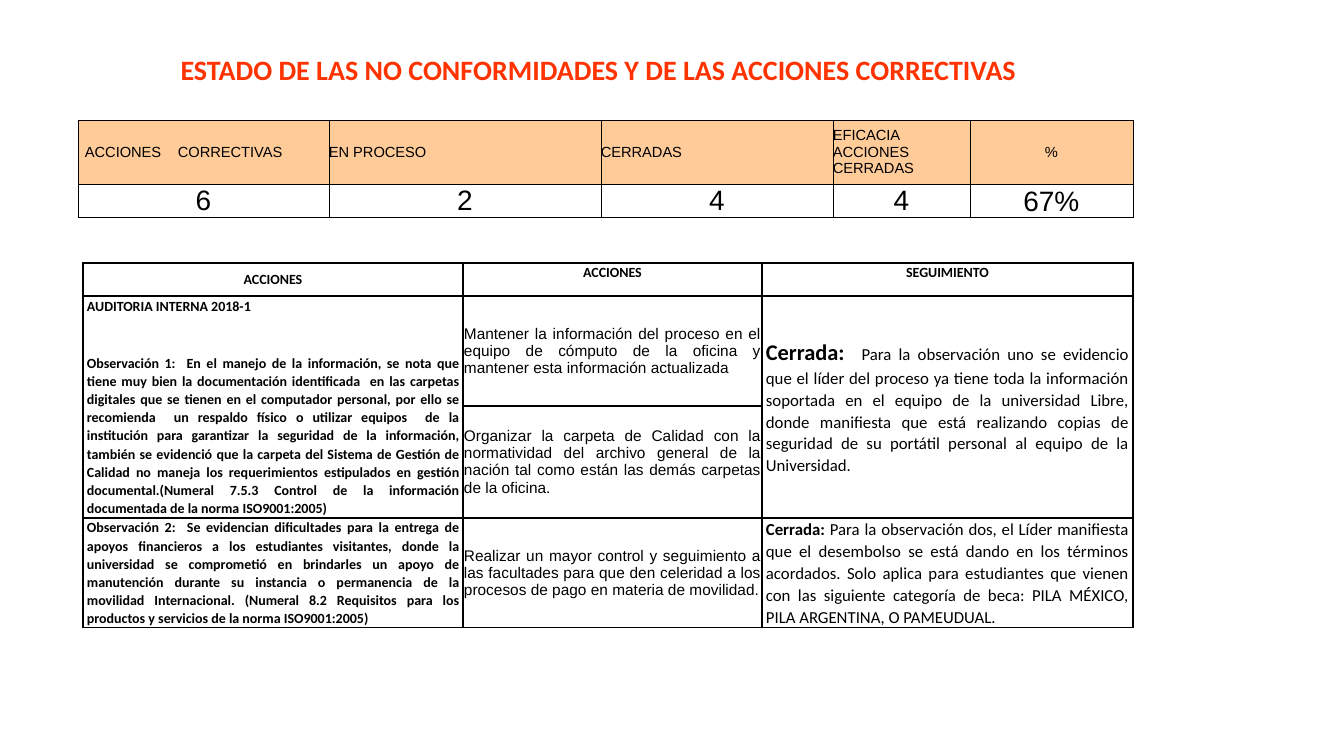
from lxml import etree
from pptx import Presentation
from pptx import util as u
from pptx.dml.color import RGBColor
from pptx.enum import text
from pptx.oxml.ns import qn

CENTER, JUSTIFY = text.PP_ALIGN.CENTER, text.PP_ALIGN.JUSTIFY
TOP, MIDDLE, BOTTOM = text.MSO_ANCHOR.TOP, text.MSO_ANCHOR.MIDDLE, text.MSO_ANCHOR.BOTTOM


def px(n):
    return u.Emu(round(n * 914400 / 100.8))


def color(value):
    return RGBColor.from_string(value)


class Page:
    black, white, peach, orange = "000000", "FFFFFF", "FFCC99", "FF3300"

    def __init__(self, prs):
        self.s = prs.slides.add_slide(prs.slide_layouts[6])

    def style(self, r, size, font, bold=False, fill=black):
        r.font.size, r.font.name, r.font.bold = u.Pt(size), font, bold
        r.font.color.rgb = color(fill)

    def paragraph(self, p, content, size, font, align, bold=False, fill=black,
                  spacing=None, after=0, lead="", lead_size=None):
        """Fill one paragraph, with an optional bold lead-in."""
        p.text = lead or content
        p.alignment, p.space_after = align, u.Pt(after)
        if spacing:
            p.line_spacing = spacing
        self.style(p.runs[0], lead_size or size, font, bold or bool(lead), fill)
        if lead:
            r = p.add_run()
            r.text = content
            self.style(r, size, font, bold, fill)

    def title(self, content, x, y, w, h):
        tf = self.s.shapes.add_textbox(px(x), px(y), px(w), px(h)).text_frame
        tf.word_wrap, tf.vertical_anchor = True, BOTTOM
        self.paragraph(tf.paragraphs[0], content, 20, "Calibri", CENTER, True,
                       self.orange, 0.9)

    def table(self, x, y, cols, rows, line):
        """Add a plain white table with a black grid."""
        frame = self.s.shapes.add_table(len(rows), len(cols), px(x), px(y),
                                        px(sum(cols)), px(sum(rows)))
        tb = frame.table
        tb.first_row = tb.horz_banding = False
        for col, w in zip(tb.columns, cols):
            col.width = px(w)
        for row, h in zip(tb.rows, rows):
            row.height = px(h)
        for cell in tb.iter_cells():
            self.borders(cell, line)
            self.fill(cell, self.white)
        return tb

    def borders(self, cell, width):
        tcPr = cell._tc.get_or_add_tcPr()
        for side in ("lnL", "lnR", "lnT", "lnB"):
            ln = etree.SubElement(tcPr, qn("a:" + side), w=str(u.Pt(width)))
            fill = etree.SubElement(ln, qn("a:solidFill"))
            etree.SubElement(fill, qn("a:srgbClr"), val=self.black)

    def fill(self, cell, value):
        cell.fill.solid()
        cell.fill.fore_color.rgb = color(value)

    def cell(self, cell, content, size, font, align, anchor=MIDDLE, margin=0, **kw):
        cell.margin_left = cell.margin_right = px(margin)
        cell.margin_top = cell.margin_bottom = 0
        cell.vertical_anchor = anchor
        self.paragraph(cell.text_frame.paragraphs[0], content, size, font, align, **kw)

    def tab_stop(self, p, pos):
        tabs = etree.SubElement(p._p.get_or_add_pPr(), qn("a:tabLst"))
        etree.SubElement(tabs, qn("a:tab"), pos=str(px(pos)), algn="l")


AUDIT = "AUDITORIA INTERNA 2018-1"
OBSERVATIONS = [
    "Observación 1:  En el manejo de la información, se nota que tiene muy bien la "
    "documentación identificada  en las carpetas digitales que se tienen en el computador "
    "personal, por ello se recomienda  un respaldo físico o utilizar equipos  de la "
    "institución para garantizar la seguridad de la información, también se evidenció que "
    "la carpeta del Sistema de Gestión de Calidad no maneja los requerimientos estipulados "
    "en gestión documental.(Numeral 7.5.3 Control de la información documentada de la "
    "norma ISO9001:2005)",
    "Observación 2:  Se evidencian dificultades para la entrega de apoyos financieros a los "
    "estudiantes visitantes, donde la universidad se comprometió en brindarles un apoyo de "
    "manutención durante su instancia o permanencia de la movilidad Internacional. "
    "(Numeral 8.2 Requisitos para los productos y servicios de la norma ISO9001:2005)",
]
ACTIONS = [
    "Mantener la información del proceso en el equipo de cómputo de la oficina y mantener "
    "esta información actualizada",
    "Organizar la carpeta de Calidad con la normatividad del archivo general de la nación "
    "tal como están las demás carpetas de la oficina.",
    "Realizar un mayor control y seguimiento a las facultades para que den celeridad a los "
    "procesos de pago en materia de movilidad.",
]
FOLLOW_UPS = [
    (1, "Cerrada:  ", 16,
     "Para la observación uno se evidencio que el líder del proceso ya tiene toda la "
     "información soportada en el equipo de la universidad Libre, donde manifiesta que está "
     "realizando copias de seguridad de su portátil personal al equipo de la Universidad."),
    (3, "Cerrada: ", 12,
     "Para la observación dos, el Líder manifiesta que el desembolso se está dando en los "
     "términos acordados. Solo aplica para estudiantes que vienen con las siguiente "
     "categoría de beca: PILA MÉXICO, PILA ARGENTINA, O PAMEUDUAL."),
]
SUMMARY = [("ACCIONES\tCORRECTIVAS", "6"), ("EN PROCESO", "2"), ("CERRADAS", "4"),
           ("EFICACIA ACCIONES CERRADAS", "4"), ("%", "67%")]


def main():
    prs = Presentation()
    prs.slide_width, prs.slide_height = px(1344), px(756)
    page = Page(prs)

    # Follow-up table: headings
    tb = page.table(83, 263, [380, 299, 371], [33, 110, 112, 110], 1)
    for c, heading in enumerate(["ACCIONES", "ACCIONES", "SEGUIMIENTO"]):
        page.cell(tb.cell(0, c), heading, 10, "Calibri", CENTER, TOP if c else MIDDLE,
                  4, bold=True, spacing=1.07)
    for c in (0, 2):
        tb.cell(1, c).merge(tb.cell(2, c))

    # Observations, actions and follow-up
    note = dict(bold=True, spacing=1.07)
    page.cell(tb.cell(1, 0), AUDIT, 10, "Calibri", JUSTIFY, margin=4, after=28, **note)
    p = tb.cell(1, 0).text_frame.add_paragraph()
    page.paragraph(p, OBSERVATIONS[0], 10, "Calibri", JUSTIFY, **note)
    page.cell(tb.cell(3, 0), OBSERVATIONS[1], 10, "Calibri", JUSTIFY, margin=4, **note)
    for row, action in enumerate(ACTIONS, 1):
        page.cell(tb.cell(row, 1), action, 11, "Arial", JUSTIFY, margin=1)
    for row, lead, lead_size, content in FOLLOW_UPS:
        page.cell(tb.cell(row, 2), content, 12, "Calibri", JUSTIFY, margin=4,
                  spacing=1.07, lead=lead, lead_size=lead_size)

    # Title
    page.title("ESTADO DE LAS NO CONFORMIDADES Y DE LAS ACCIONES CORRECTIVAS",
               145, 27, 907, 64)

    # Summary table
    tb = page.table(78, 120, [251, 272, 232, 137, 163], [64, 31], 0.5)
    for c, (heading, value) in enumerate(SUMMARY):
        head = tb.cell(0, c)
        page.fill(head, page.peach)
        page.cell(head, heading, 10.5, "Arial", CENTER if heading == "%" else JUSTIFY)
        page.cell(tb.cell(1, c), value, 20, "Arial", CENTER,
                  BOTTOM if value == "67%" else MIDDLE)
    first = tb.cell(0, 0)
    first.margin_left = px(7)
    page.tab_stop(first.text_frame.paragraphs[0], 93)

    prs.save("out.pptx")


if __name__ == "__main__":
    main()
